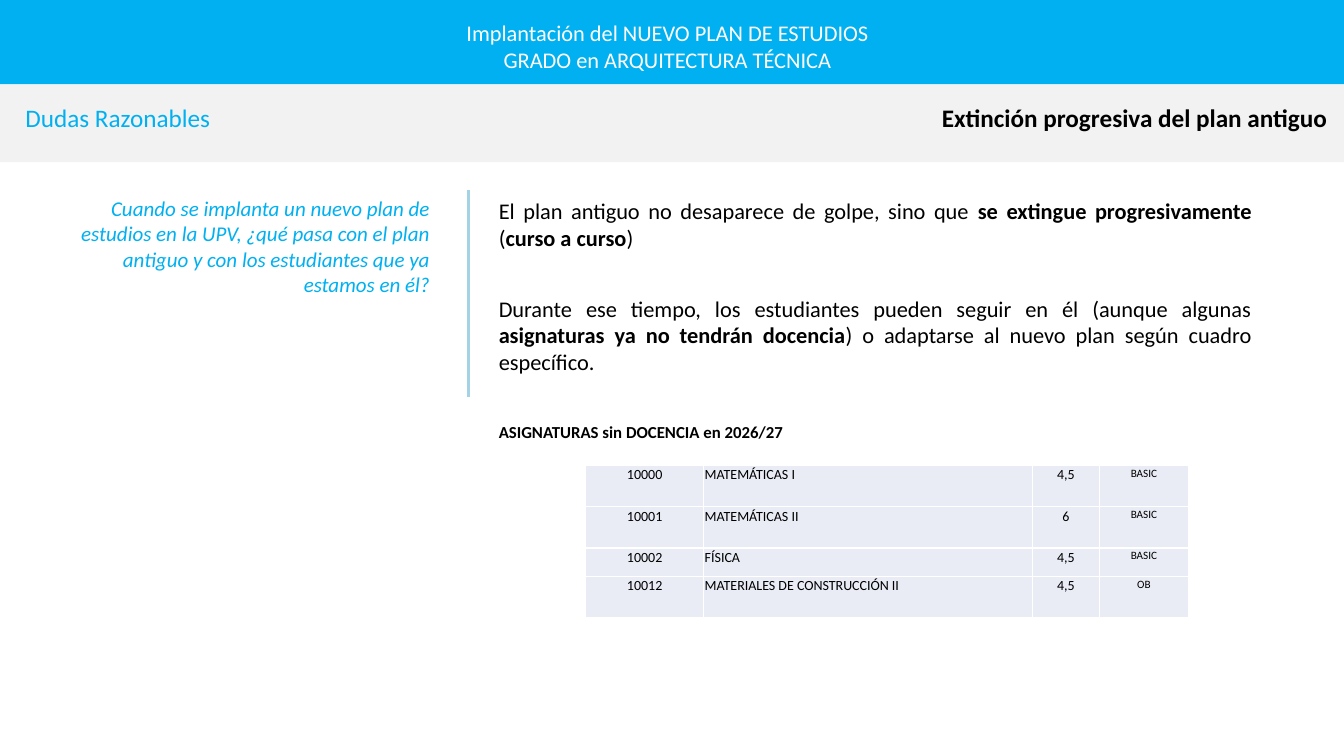
"""Build the slide on the progressive phase-out of the old study plan."""
from lxml.etree import SubElement
from pptx import Presentation
from pptx.dml.color import RGBColor
from pptx.enum.shapes import MSO_CONNECTOR as Connector, MSO_SHAPE as Shape
from pptx.enum.text import MSO_ANCHOR as Anchor, MSO_AUTO_SIZE as AutoSize, PP_ALIGN as Align
from pptx.oxml.ns import qn
from pptx.util import Cm, Pt

BLUE, BLACK, WHITE = "00B0F0", "000000", "FFFFFF"


def color(value):
    return RGBColor.from_string(value)


def write(frame, paragraphs, size, ink, align=Align.LEFT, margins=(0.25, 0.13, 0.25, 0.13),
          spacing=None, **style):
    """Fill a frame with paragraphs, each a list of (text, bold) runs."""
    sides = ("margin_left", "margin_top", "margin_right", "margin_bottom")
    for side, margin in zip(sides, margins):
        setattr(frame, side, Cm(margin))
    for number, runs in enumerate(paragraphs):
        paragraph = frame.add_paragraph() if number else frame.paragraphs[0]
        paragraph.alignment = align
        if spacing:
            paragraph.space_after = Pt(spacing["after"])
            if number:
                paragraph.space_before = Pt(spacing["before"])
        for text, bold in runs:
            run = paragraph.add_run()
            run.text = text
            values = {"name": "Calibri", "size": Pt(size), "bold": bold, **style}
            for attribute, value in values.items():
                setattr(run.font, attribute, value)
            run.font.color.rgb = color(ink)


deck = Presentation()
deck.slide_width, deck.slide_height = Cm(33.87), Cm(19.05)
slide = deck.slides.add_slide(deck.slide_layouts[5])
shapes = slide.shapes

for top, height, fill in [(0, 2.13, BLUE), (2.13, 1.96, "F2F2F2")]:
    band = shapes.add_shape(Shape.RECTANGLE, 0, Cm(top), deck.slide_width, Cm(height))
    band.shadow.inherit = False
    band.fill.solid()
    band.fill.fore_color.rgb = color(fill)
    band.line.fill.background()

title = shapes.title
shapes._spTree.append(title._element)

tight = {"margins": (0.13, 0.13, 0.13, 0.13)}
question = ("Cuando se implanta un nuevo plan de estudios en la UPV, ¿qué pasa con el plan "
            "antiguo y con los estudiantes que ya estamos en él?")
answer = [
    [("El plan antiguo no desaparece de golpe, sino que ", False),
     ("se extingue progresivamente ", True), ("(", False),
     ("curso a curso", True), (")", False)],
    [("Durante ese tiempo, los estudiantes pueden seguir en él (aunque algunas ", False),
     ("asignaturas ya no tendrán docencia", True),
     (") o adaptarse al nuevo plan según cuadro específico.", False)],
]
header = [[("Implantación del NUEVO PLAN DE ESTUDIOS ", False)],
          [("GRADO en ARQUITECTURA TÉCNICA ", False)]]

texts = [
    ((0.51, 2.46, 6.68, 1.02), [[("Dudas Razonables", False)]], 18, BLUE, tight),
    ((1.02, 4.8, 10.06, 2.82), [[(question, False)]], 15, BLUE,
     {"align": Align.RIGHT, "italic": True}),
    ((12.32, 4.83, 19.48, 4.78), answer, 16, BLACK,
     {"align": Align.JUSTIFY, "spacing": {"before": 25.5, "after": 6}}),
    ((16.64, 2.46, 16.94, 1.02), [[("Extinción progresiva del plan antiguo", True)]], 18, BLACK,
     {"align": Align.RIGHT, **tight}),
    ((5.99, 0.36, 21.79, 1.63), header, 16, WHITE, {"align": Align.CENTER, **tight}),
    ((12.32, 10.49, 16.94, 0.76), [[("ASIGNATURAS sin DOCENCIA en 2026/27", True)]], 12, BLACK, {}),
]
for place, paragraphs, size, ink, options in texts:
    left, top, width, height = map(Cm, place)
    if "Extinción" in paragraphs[0][0][0]:
        box = title
        box.left, box.top, box.width, box.height = left, top, width, height
    else:
        box = shapes.add_textbox(left, top, width, height)
    frame_values = {"word_wrap": True, "auto_size": AutoSize.SHAPE_TO_FIT_TEXT,
                    "vertical_anchor": Anchor.TOP}
    for attribute, value in frame_values.items():
        setattr(box.text_frame, attribute, value)
    write(box.text_frame, paragraphs, size, ink, **options)

divider = shapes.add_connector(Connector.STRAIGHT, Cm(11.81), Cm(10.01), Cm(11.81), Cm(4.8))
divider.line.color.rgb = color("A4D3E6")
divider.line.width = Pt(2.25)
SubElement(divider._element.spPr, qn("a:effectLst"))

subjects = [
    ("10000", "MATEMÁTICAS I", "4,5", "BASIC"),
    ("10001", "MATEMÁTICAS II", "6", "BASIC"),
    ("10002", "FÍSICA", "4,5", "BASIC"),
    ("10012", "MATERIALES DE CONSTRUCCIÓN II", "4,5", "OB"),
]
column_widths = [2.97, 8.28, 1.7, 2.24]
row_heights = [1.04, 1.04, 0.71, 1.04]
column_formats = [(10, Align.CENTER), (10, Align.LEFT), (10, Align.CENTER), (8, Align.CENTER)]
table = shapes.add_table(len(subjects), len(column_widths), Cm(14.76), Cm(11.73),
                         Cm(sum(column_widths)), Cm(sum(row_heights))).table
table.first_row = table.horz_banding = False
for column, width in zip(table.columns, column_widths):
    column.width = Cm(width)
for row, height, subject in zip(table.rows, row_heights, subjects):
    row.height = Cm(height)
    for cell, text, (size, align) in zip(row.cells, subject, column_formats):
        write(cell.text_frame, [[(text, False)]], size, BLACK, align)
        cell.margin_left = cell.margin_top = cell.margin_right = Cm(0.03)
        cell.margin_bottom = 0
        properties = cell._tc.get_or_add_tcPr()
        for edge in ("a:lnL", "a:lnR", "a:lnT", "a:lnB"):
            border = SubElement(properties, qn(edge), w=str(Pt(1)))
            SubElement(SubElement(border, qn("a:solidFill")), qn("a:srgbClr"), val=WHITE)
        cell.fill.solid()
        cell.fill.fore_color.rgb = color("E9EBF5")

deck.save("out.pptx")
